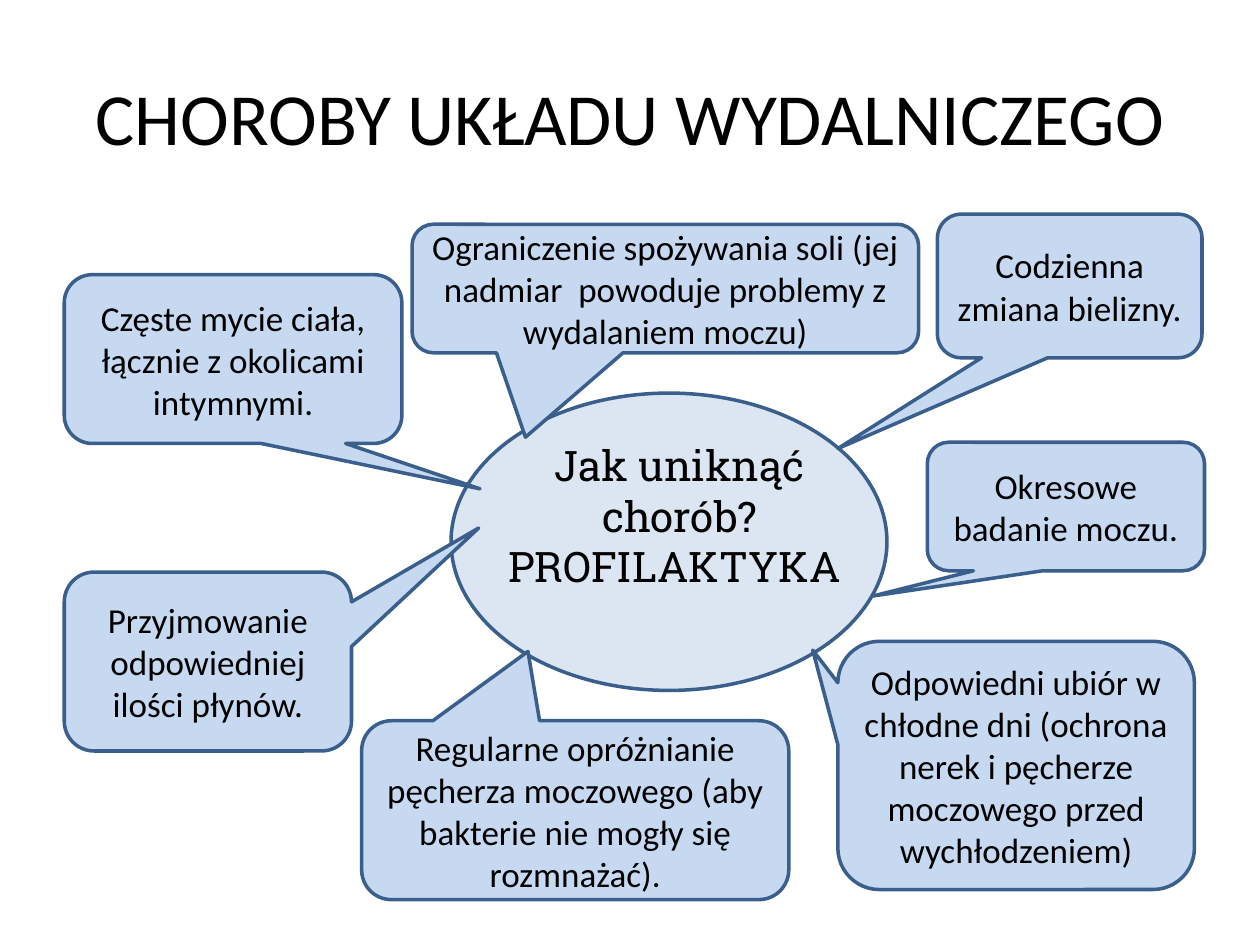
from dataclasses import dataclass

from pptx import Presentation
from pptx.dml.color import RGBColor
from pptx.enum.shapes import MSO_SHAPE
from pptx.enum.text import MSO_ANCHOR, PP_ALIGN
from pptx.util import Inches, Pt


@dataclass(frozen=True)
class Theme:
    font: str = "Calibri"
    accent_font: str = "Roboto Slab"
    ink: str = "000000"
    line: str = "3A5F8C"
    callout: str = "C6D9F1"
    center: str = "DCE6F2"
    title_size: int = 42
    center_size: int = 24
    callout_size: int = 20
    line_width: int = 2


THEME = Theme()

TITLE = ("CHOROBY UKŁADU WYDALNICZEGO", (0.5, 0.3, 9, 1.25))
QUESTION = ("Jak uniknąć chorób? PROFILAKTYKA ", (3.74, 3.44, 3.31, 1.31))
CENTER_BOX = (3.58, 3.12, 3.46, 2.36)

CALLOUTS = [
    ("Codzienna zmiana bielizny.", (7.44, 1.7, 2.1, 1.14), (6.65, 3.56)),
    ("Odpowiedni ubiór w chłodne dni (ochrona nerek i pęcherze moczowego "
     "przed wychłodzeniem)", (6.65, 5.09, 2.83, 1.97), (6.45, 5.16)),
    ("Częste mycie ciała, łącznie z okolicami intymnymi.",
     (0.51, 2.18, 2.68, 1.34), (3.81, 3.88)),
    ("Przyjmowanie odpowiedniej ilości płynów.",
     (0.51, 4.54, 2.28, 1.42), (3.8, 4.19)),
    ("Regularne opróżnianie pęcherza moczowego (aby bakterie nie mogły się "
     "rozmnażać).", (2.87, 5.72, 3.39, 1.42), (4.19, 5.17)),
    ("Ograniczenie spożywania soli (jej nadmiar  powoduje problemy z "
     "wydalaniem moczu)", (3.27, 1.78, 4.02, 1.02), (4.17, 3.47)),
    ("Okresowe badanie moczu.", (7.36, 3.51, 2.2, 1.02), (6.93, 4.73)),
]


def write(sp, text, size, font, anchor):
    tf = sp.text_frame
    tf.word_wrap = True
    tf.vertical_anchor = anchor
    p = tf.paragraphs[0]
    p.alignment = PP_ALIGN.CENTER
    r = p.add_run()
    r.text = text
    r.font.size = Pt(size)
    r.font.name = font
    r.font.color.rgb = RGBColor.from_string(THEME.ink)


def add_text(s, text, box, size, font, anchor):
    sp = s.shapes.add_textbox(*map(Inches, box))
    write(sp, text, size, font, anchor)


def add_shape(s, kind, box, fill):
    sp = s.shapes.add_shape(kind, *map(Inches, box))
    sp.shadow.inherit = False
    sp.fill.solid()
    sp.fill.fore_color.rgb = RGBColor.from_string(fill)
    sp.line.color.rgb = RGBColor.from_string(THEME.line)
    sp.line.width = Pt(THEME.line_width)
    return sp


def add_callout(s, text, box, tip):
    sp = add_shape(s, MSO_SHAPE.ROUNDED_RECTANGULAR_CALLOUT, box, THEME.callout)
    x, y, w, h = box
    sp.adjustments[0] = (tip[0] - x) / w - 0.5
    sp.adjustments[1] = (tip[1] - y) / h - 0.5
    write(sp, text, THEME.callout_size, THEME.font, MSO_ANCHOR.MIDDLE)


def main():
    prs = Presentation()
    prs.slide_width, prs.slide_height = Inches(10), Inches(7.5)
    s = prs.slides.add_slide(prs.slide_layouts[6])
    add_shape(s, MSO_SHAPE.OVAL, CENTER_BOX, THEME.center)
    add_text(s, *QUESTION, THEME.center_size, THEME.accent_font, MSO_ANCHOR.TOP)
    for text, box, tip in CALLOUTS:
        add_callout(s, text, box, tip)
    add_text(s, *TITLE, THEME.title_size, THEME.font, MSO_ANCHOR.MIDDLE)
    prs.save("out.pptx")


if __name__ == "__main__":
    main()
